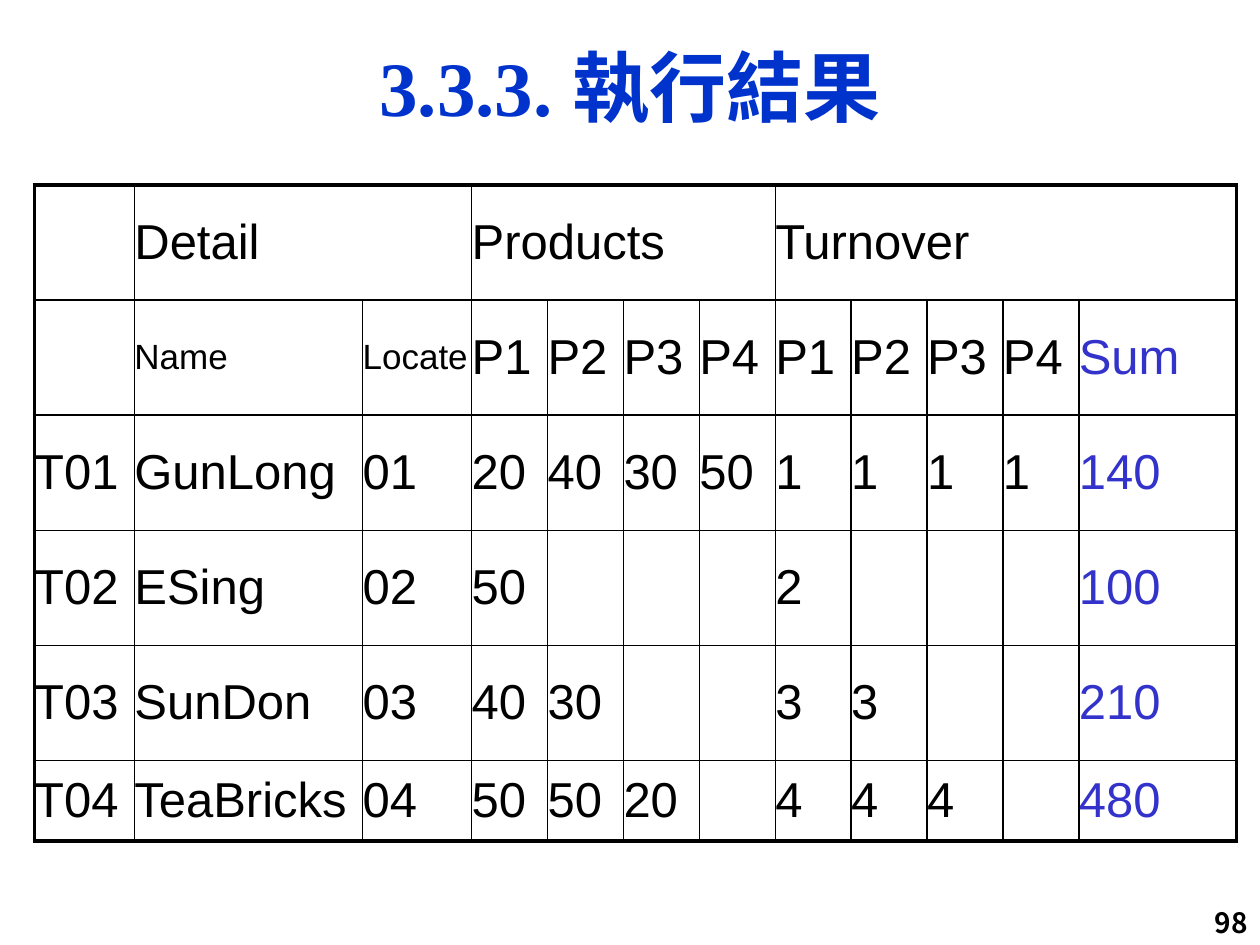
from pptx import Presentation
from pptx.dml.color import RGBColor
from pptx.enum.text import MSO_ANCHOR as Anchor, PP_ALIGN as Align
from pptx.oxml.ns import qn
from pptx.util import Cm, Pt
from lxml.etree import SubElement as Sub

BLACK = RGBColor(0x00, 0x00, 0x00)
WHITE = RGBColor(0xFF, 0xFF, 0xFF)
BLUE = RGBColor(0x00, 0x33, 0xCC)
VIOLET = RGBColor(0x33, 0x33, 0xCC)

SANS = "Arial"
SERIF = "Times New Roman"
CJK = "Noto Sans CJK SC"

THIN, THICK = 1, 2.25

# Table content and grid (cm)
ROWS = [
    ["", "Detail", "", "Products", "", "", "", "Turnover", "", "", "", ""],
    ["", "Name", "Locate"] + ["P1", "P2", "P3", "P4"] * 2 + ["Sum"],
    ["T01", "GunLong", "01", "20", "40", "30", "50", "1", "1", "1", "1", "140"],
    ["T02", "ESing", "02", "50", "", "", "", "2", "", "", "", "100"],
    ["T03", "SunDon", "03", "40", "30", "", "", "3", "3", "", "", "210"],
    ["T04", "TeaBricks", "04", "50", "50", "20", "", "4", "4", "4", "", "480"],
]
SPANS = [(1, 2), (3, 6), (7, 11)]
WIDTHS = [2.02, 4.6, 2.2] + [1.53] * 8 + [3.18]
HEIGHTS = [2.32] * 5 + [1.62]
SMALL = {"Name", "Locate"}


class Deck:
    def __init__(self, wide, high):
        self.prs = Presentation()
        self.prs.slide_width, self.prs.slide_height = Cm(wide), Cm(high)
        self.slide = self.prs.slides.add_slide(self.prs.slide_layouts[5])

    def run(self, para, text, size, font, color, bold=False):
        run = para.add_run()
        run.text = text
        run.font.size, run.font.name, run.font.bold = Pt(size), font, bold
        run.font.color.rgb = color
        Sub(run.font._element, qn("a:ea")).set("typeface", CJK)

    def title(self, text, left, top, wide, high):
        box = self.slide.shapes.title
        box.left, box.top, box.width, box.height = map(Cm, (left, top, wide, high))
        frame = box.text_frame
        frame.vertical_anchor = Anchor.MIDDLE
        para = frame.paragraphs[0]
        para.alignment = Align.CENTER
        self.run(para, text, 44, SERIF, BLUE, True)

    def number(self, text, left, top, wide, high):
        box = self.slide.shapes.add_textbox(*map(Cm, (left, top, wide, high)))
        frame = box.text_frame
        frame.word_wrap = True
        frame.vertical_anchor = Anchor.MIDDLE
        frame.margin_top = frame.margin_bottom = 0
        para = frame.paragraphs[0]
        para.alignment = Align.RIGHT
        self.run(para, text, 16, CJK, BLACK, True)

    def edges(self, cell, outer):
        props = cell._tc.get_or_add_tcPr()
        for side in "LRTB":
            width = THICK if side in outer else THIN
            line = Sub(props, qn(f"a:ln{side}"), w=str(int(Pt(width))))
            fill = Sub(line, qn("a:solidFill"))
            Sub(fill, qn("a:srgbClr"), val=str(BLACK))

    def table(self, rows, left, top):
        last_row, last_col = len(rows) - 1, len(WIDTHS) - 1
        frame = self.slide.shapes.add_table(
            len(rows), len(WIDTHS), Cm(left), Cm(top),
            Cm(sum(WIDTHS)), Cm(sum(HEIGHTS)))
        grid = frame.table
        grid.first_row = grid.horz_banding = False
        for col, wide in zip(grid.columns, WIDTHS):
            col.width = Cm(wide)
        for row, high in zip(grid.rows, HEIGHTS):
            row.height = Cm(high)
        for start, end in SPANS:
            grid.cell(0, start).merge(grid.cell(0, end))

        for r, row in enumerate(rows):
            for c, text in enumerate(row):
                cell = grid.cell(r, c)
                end = c + cell.span_width - 1 if cell.is_merge_origin else c
                tests = {"L": c == 0, "R": end == last_col,
                         "T": r == 0, "B": r == last_row}
                self.edges(cell, {side for side, hit in tests.items() if hit})
                cell.fill.solid()
                cell.fill.fore_color.rgb = WHITE
                cell.vertical_anchor = Anchor.MIDDLE
                cell.margin_left = cell.margin_right = 0
                cell.margin_top = cell.margin_bottom = 0
                if text:
                    size = 20 if text in SMALL else 28
                    color = VIOLET if c == last_col else BLACK
                    self.run(cell.text_frame.paragraphs[0], text, size, SANS, color)


def main():
    deck = Deck(25.4, 19.05)
    # Heading
    deck.title("3.3.3. 執行結果", 1.9, 0.53, 21.6, 2.41)
    # Results
    deck.table(ROWS, 0.69, 3.73)
    # Page number
    deck.number("98", 22.91, 18.14, 2.49, 0.91)
    deck.prs.save("out.pptx")


if __name__ == "__main__":
    main()
